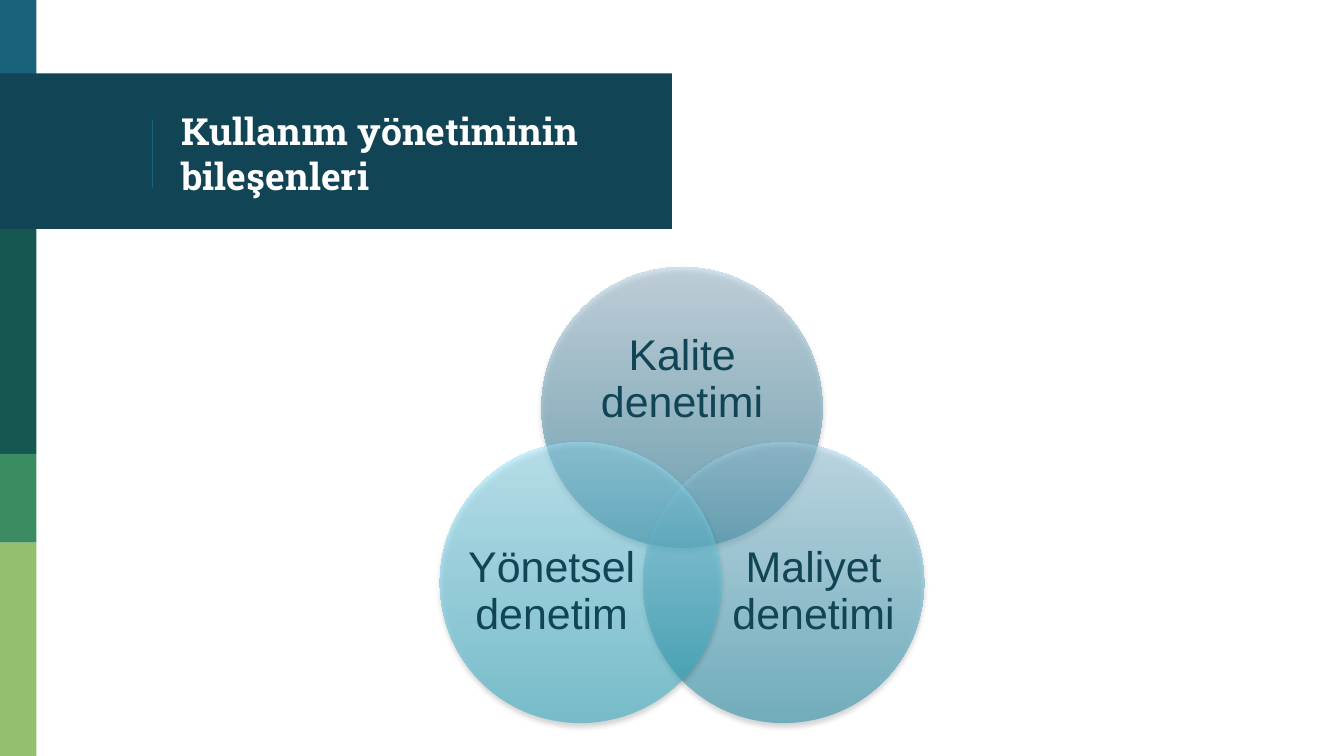
from dataclasses import dataclass

import pptx
import pptx.dml.color
import pptx.enum.shapes
import pptx.enum.text
import pptx.oxml
import pptx.oxml.ns
import pptx.util
from pptx.util import Cm, Pt


@dataclass(frozen=True)
class Theme:
    blue: str = "18637B"
    navy: str = "114454"
    teal: str = "165751"
    green: str = "3B8D61"
    lime: str = "94BF6E"
    white: str = "FFFFFF"
    title_font: str = "Roboto Slab"
    label_font: str = "Arial"
    title_size: int = 20
    label_size: int = 23


@dataclass(frozen=True)
class Box:
    left: float
    top: float
    width: float
    height: float

    def lengths(self) -> tuple:
        return tuple(Cm(value) for value in (self.left, self.top, self.width, self.height))


@dataclass(frozen=True)
class Band:
    box: Box
    color: str


@dataclass(frozen=True)
class Circle:
    center_offset: float
    top: float
    bottom_color: str
    top_color: str
    label: str
    label_box: Box


THEME = Theme()
DIAMETER = 5.31
CENTER = 12.89
SIDE_OFFSET = 1.92
STRIPE = 0.69

BANDS = [
    Band(Box(0, 0, STRIPE, 1.47), THEME.blue),
    Band(Box(0, 1.39, 12.7, 2.94), THEME.navy),
    Band(Box(0, 4.33, STRIPE, 4.25), THEME.teal),
    Band(Box(0, 8.58, STRIPE, 1.68), THEME.green),
    Band(Box(0, 10.26, STRIPE, 4.03), THEME.lime),
]

CIRCLES = [
    Circle(0, 5.05, "096B8A", "ABCADD", "Kalite denetimi", Box(10.95, 5.99, 3.89, 2.39)),
    Circle(SIDE_OFFSET, 8.36, "1289A6", "A3D6ED", "Maliyet denetimi", Box(13.79, 9.73, 3.18, 2.92)),
    Circle(-SIDE_OFFSET, 8.36, "1DA7C0", "9BE8FF", "Yönetsel denetim", Box(8.84, 9.73, 3.18, 2.92)),
]

SHADOW = (
    f'<a:outerShdw {pptx.oxml.ns.nsdecls("a")} blurRad="{Pt(3.1)}" dist="{Pt(1.8)}" '
    'dir="5400000" rotWithShape="0"><a:srgbClr val="000000">'
    '<a:alpha val="35000"/></a:srgbClr></a:outerShdw>'
)


def rgb(color: str) -> pptx.dml.color.RGBColor:
    return pptx.dml.color.RGBColor.from_string(color)


def add_band(slide, band: Band) -> None:
    shape = slide.shapes.add_shape(pptx.enum.shapes.MSO_SHAPE.RECTANGLE, *band.box.lengths())
    shape.shadow.inherit = False
    shape.fill.solid()
    shape.fill.fore_color.rgb = rgb(band.color)
    shape.line.fill.background()


def add_divider(slide, left: float, top: float, bottom: float) -> None:
    connector = slide.shapes.add_connector(
        pptx.enum.shapes.MSO_CONNECTOR.STRAIGHT, Cm(left), Cm(top), Cm(left), Cm(bottom))
    connector.line.color.rgb = rgb(THEME.blue)
    connector.line.width = Pt(0.75)
    properties = connector._element.spPr
    properties.append(pptx.oxml.parse_xml(f'<a:effectLst {pptx.oxml.ns.nsdecls("a")}/>'))


def add_text(slide, box: Box, text: str, font: str, size: int, color: str, margin: float = 0):
    """Add a vertically centred text box and return its paragraph."""
    frame = slide.shapes.add_textbox(*box.lengths()).text_frame
    frame.word_wrap = True
    frame.vertical_anchor = pptx.enum.text.MSO_ANCHOR.MIDDLE
    frame.margin_left = frame.margin_right = Cm(margin)
    frame.margin_top = frame.margin_bottom = Cm(margin)
    paragraph = frame.paragraphs[0]
    paragraph.text = text
    paragraph.font.name = font
    paragraph.font.size = Pt(size)
    paragraph.font.color.rgb = rgb(color)
    return paragraph


def add_circle(slide, circle: Circle) -> None:
    box = Box(CENTER + circle.center_offset - DIAMETER / 2, circle.top, DIAMETER, DIAMETER)
    shape = slide.shapes.add_shape(pptx.enum.shapes.MSO_SHAPE.OVAL, *box.lengths())
    shape.line.fill.background()

    # Half-transparent gradient, dark at the bottom
    shape.fill.gradient()
    shape.fill.gradient_angle = 90
    for stop, color in zip(shape.fill.gradient_stops, (circle.bottom_color, circle.top_color)):
        stop.color.rgb = rgb(color)
    properties = shape._element.spPr
    for color_element in properties.iter(pptx.oxml.ns.qn("a:srgbClr")):
        color_element.append(pptx.oxml.parse_xml(
            f'<a:alpha {pptx.oxml.ns.nsdecls("a")} val="50000"/>'))

    # Soft shadow below
    shape.shadow.inherit = False
    properties.find(pptx.oxml.ns.qn("a:effectLst")).append(pptx.oxml.parse_xml(SHADOW))

    paragraph = add_text(slide, circle.label_box, circle.label,
                         THEME.label_font, THEME.label_size, THEME.navy)
    paragraph.alignment = pptx.enum.text.PP_ALIGN.CENTER
    paragraph.line_spacing = 0.9


def main() -> None:
    presentation = pptx.Presentation()
    presentation.slide_width = Cm(25.4)
    presentation.slide_height = Cm(14.29)
    slide = presentation.slides.add_slide(presentation.slide_layouts[6])

    # Side stripe and title band
    for band in BANDS:
        add_band(slide, band)
    add_divider(slide, 2.88, 2.26, 3.56)

    # Title
    title = add_text(slide, Box(3.18, 1.47, 8.92, 2.85), "Kullanım yönetiminin bileşenleri",
                     THEME.title_font, THEME.title_size, THEME.white, margin=0.25)
    title.font.bold = True

    # Venn diagram
    for circle in CIRCLES:
        add_circle(slide, circle)

    presentation.save("out.pptx")


if __name__ == "__main__":
    main()
